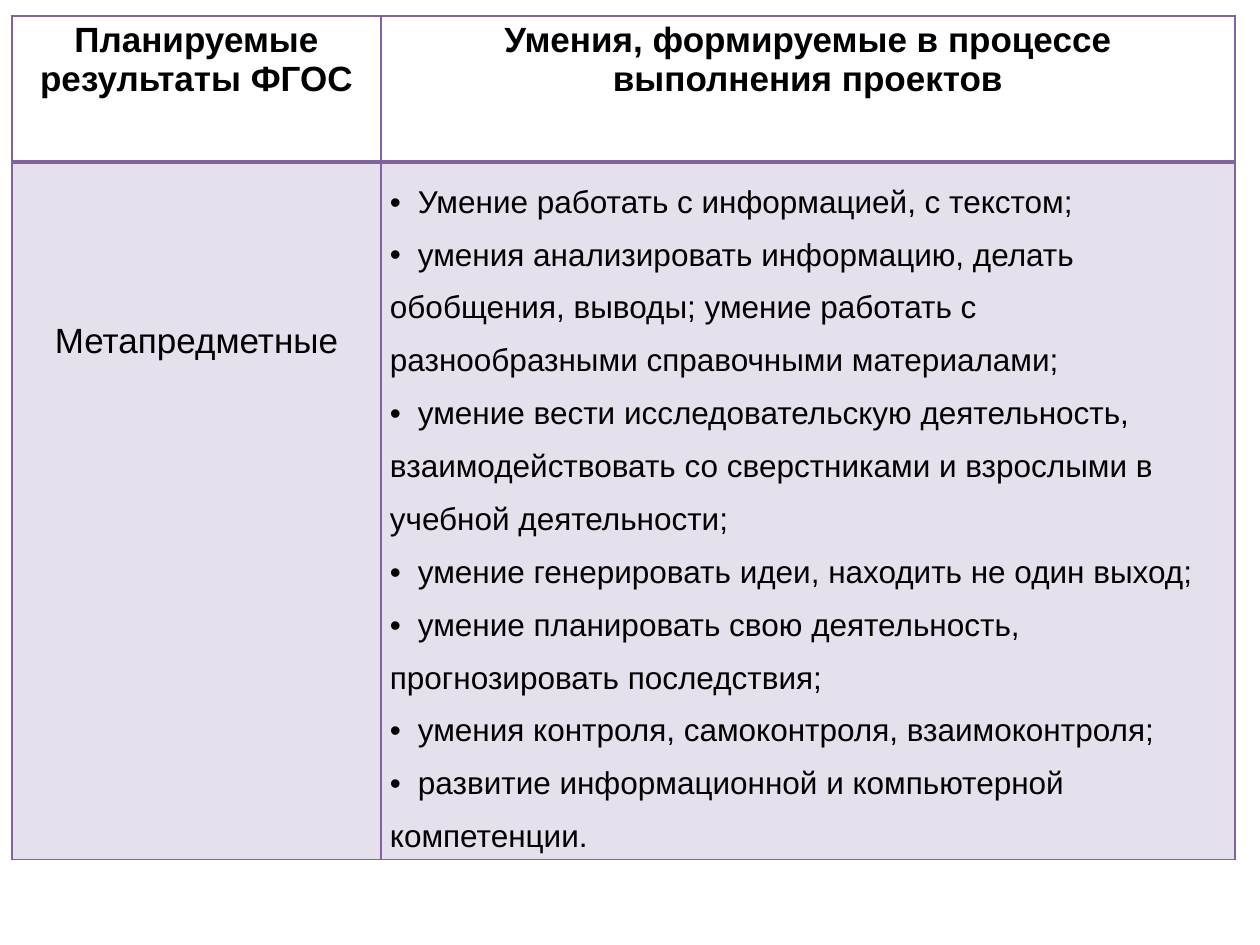
from lxml import etree
from pptx import Presentation
from pptx.dml.color import RGBColor
from pptx.enum.text import PP_ALIGN
from pptx.oxml.ns import qn
from pptx.util import Emu, Pt

CENTER, LEFT = PP_ALIGN.CENTER, PP_ALIGN.LEFT

# Content
HEADERS = ["Планируемые результаты ФГОС",
           "Умения, формируемые в процессе выполнения проектов"]
RESULT_GROUP = "Метапредметные"
SKILLS = [
    "Умение работать с информацией, с текстом;",
    "умения анализировать информацию, делать обобщения, выводы; "
    "умение работать с разнообразными справочными материалами;",
    "умение вести исследовательскую деятельность, взаимодействовать "
    "со сверстниками и взрослыми в учебной деятельности;",
    "умение генерировать идеи, находить не один выход;",
    "умение планировать свою деятельность, прогнозировать последствия;",
    "умения контроля, самоконтроля, взаимоконтроля;",
    "развитие информационной и компьютерной компетенции.",
]

# Layout in px
SLIDE_W, SLIDE_H = 1260, 945
TABLE_LEFT, TABLE_TOP = 12, 16
COLUMNS = [369, 854]
ROWS = [146, 697]
SIDE_INSET, TOP_INSET = 9, 5
GROUP_INSET = 160
SKILL_TAB = 28

FONT, TEXT, PURPLE = "Arial", "000000", "8064A2"
TINT_PERCENT = 20


def px(n):
    return Emu(n * 914400 // 126)


def rgb(value):
    return RGBColor.from_string(value)


def child(parent, tag, **attributes):
    return etree.SubElement(parent, qn(tag), **attributes)


def format_cell(cell, is_header, top_inset=TOP_INSET):
    cell.margin_left = cell.margin_right = px(SIDE_INSET)
    cell.margin_top, cell.margin_bottom = px(top_inset), px(TOP_INSET)
    properties = cell._tc.get_or_add_tcPr()
    for side in "LRTB":
        heavy = (side == "B") if is_header else (side == "T")
        border = child(properties, f"a:ln{side}", w=str(Pt(2 if heavy else 1)))
        child(child(border, "a:solidFill"), "a:srgbClr", val=PURPLE)
    if is_header:
        cell.fill.background()
    else:
        cell.fill.solid()
        cell.fill.fore_color.rgb = rgb(PURPLE)
        tint = properties.find(qn("a:solidFill")).find(qn("a:srgbClr"))
        child(tint, "a:alpha", val=str(TINT_PERCENT * 1000))


def write(paragraph, text, size, align, bold=False):
    paragraph.alignment = align
    run = paragraph.add_run()
    run.text = text
    run.font.name, run.font.size, run.font.bold = FONT, Pt(size), bold
    run.font.color.rgb = rgb(TEXT)


def add_bullet(paragraph):
    properties = paragraph._p.get_or_add_pPr()
    properties.set("marL", "0")
    properties.set("indent", "0")
    child(properties, "a:buFont", typeface=FONT)
    child(properties, "a:buChar", char="•")
    child(child(properties, "a:tabLst"), "a:tab", pos=str(px(SKILL_TAB)), algn="l")


prs = Presentation()
prs.slide_width, prs.slide_height = px(SLIDE_W), px(SLIDE_H)
slide = prs.slides.add_slide(prs.slide_layouts[6])

# Table grid
table = slide.shapes.add_table(
    len(ROWS), len(COLUMNS), px(TABLE_LEFT), px(TABLE_TOP),
    px(sum(COLUMNS)), px(sum(ROWS))).table
table.first_row = table.horz_banding = False
for column, width in zip(table.columns, COLUMNS):
    column.width = px(width)
for row, height in zip(table.rows, ROWS):
    row.height = px(height)

# Header row
for index, header in enumerate(HEADERS):
    header_cell = table.cell(0, index)
    format_cell(header_cell, True)
    write(header_cell.text_frame.paragraphs[0], header, 20, CENTER, bold=True)

# Result group
group_cell = table.cell(1, 0)
format_cell(group_cell, False, GROUP_INSET)
write(group_cell.text_frame.paragraphs[0], RESULT_GROUP, 20, CENTER)

# Skills list
skills_cell = table.cell(1, 1)
format_cell(skills_cell, False)
skills_frame = skills_cell.text_frame
for index, skill in enumerate(SKILLS):
    paragraph = skills_frame.add_paragraph() if index else skills_frame.paragraphs[0]
    add_bullet(paragraph)
    paragraph.line_spacing = 1.5
    write(paragraph, "\t" + skill, 18, LEFT)

prs.save("out.pptx")
